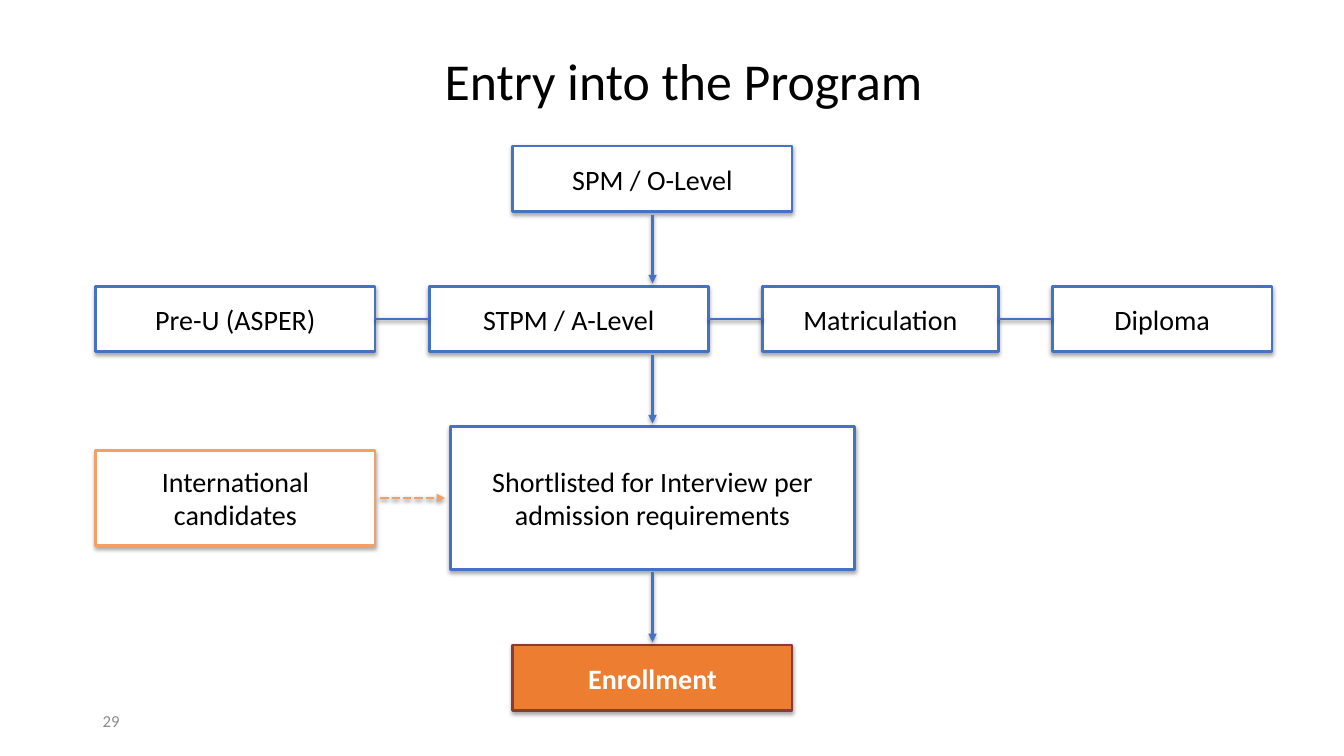
from dataclasses import dataclass
from itertools import pairwise

from lxml.etree import SubElement
from pptx import Presentation
from pptx.dml.color import RGBColor
from pptx.enum.dml import MSO_LINE
from pptx.enum.shapes import MSO_CONNECTOR, MSO_SHAPE
from pptx.enum.text import MSO_ANCHOR, PP_ALIGN
from pptx.oxml.ns import qn
from pptx.util import Inches, Pt

W, H = Inches(13.33), Inches(7.5)
BLUE, PEACH, ORANGE, MAROON = "4472C4", "F2A068", "ED7D31", "8C3A38"
BLACK, WHITE, GREY = "000000", "FFFFFF", "8C8C8C"
MID_X, LEFT, WIDE, LOW = 48.55, 7.13, 20.78, 8.67
ROUTE_GAP, ARROW_GAP = 4.02, 0.4


@dataclass
class Step:
    """A flowchart box, measured in percent of the slide's size."""

    text: str
    x: float
    y: float
    w: float = WIDE
    h: float = LOW
    line: str = BLUE
    fill: str = WHITE
    color: str = BLACK
    bold: bool = False

    @property
    def right(self) -> float:
        return self.x + self.w

    @property
    def bottom(self) -> float:
        return self.y + self.h

    @property
    def mid_y(self) -> float:
        return self.y + self.h / 2


def across(share: float) -> int:
    return round(W * share / 100)


def down(share: float) -> int:
    return round(H * share / 100)


def area(x: float, y: float, w: float, h: float) -> tuple[int, int, int, int]:
    return across(x), down(y), across(w), down(h)


def rgb(value: str) -> RGBColor:
    return RGBColor.from_string(value)


def write(tf, text: str, *, size: float = 20, color: str = BLACK, bold: bool = False,
          align=PP_ALIGN.CENTER, spacing: float = 1.0, inset: float | None = None) -> None:
    """Fill a text frame with one formatted paragraph."""
    tf.word_wrap = True
    tf.vertical_anchor = MSO_ANCHOR.MIDDLE
    if inset is not None:
        tf.margin_left = tf.margin_right = tf.margin_top = tf.margin_bottom = Inches(inset)
    p = tf.paragraphs[0]
    p.alignment, p.line_spacing = align, spacing
    r = p.add_run()
    r.text = text
    r.font.name, r.font.size, r.font.bold = "Calibri", Pt(size), bold
    r.font.color.rgb = rgb(color)


def add_shadow(sp, opacity: int, distance: float) -> None:
    """Give a shape or connector a soft shadow below it."""
    effects = SubElement(sp._element.spPr, qn("a:effectLst"))
    shadow = SubElement(effects, qn("a:outerShdw"), blurRad=str(Pt(3)), dist=str(Pt(distance)),
                        dir="5400000", rotWithShape="0")
    color = SubElement(shadow, qn("a:srgbClr"), val=BLACK)
    SubElement(color, qn("a:alpha"), val=str(opacity * 1000))


def add_step(s, step: Step) -> None:
    sp = s.shapes.add_shape(MSO_SHAPE.RECTANGLE, *area(step.x, step.y, step.w, step.h))
    sp.fill.solid()
    sp.fill.fore_color.rgb = rgb(step.fill)
    sp.line.color.rgb = rgb(step.line)
    sp.line.width = Pt(2)
    add_shadow(sp, 35, 1.8)
    write(sp.text_frame, step.text, color=step.color, bold=step.bold, inset=0.05)


def add_link(s, x1: float, y1: float, x2: float, y2: float, *, color: str = BLUE,
             arrow: bool = True, dashed: bool = False) -> None:
    link = s.shapes.add_connector(MSO_CONNECTOR.STRAIGHT, across(x1), down(y1), across(x2), down(y2))
    link.line.color.rgb = rgb(color)
    link.line.width = Pt(2)
    if dashed:
        link.line.dash_style = MSO_LINE.SQUARE_DOT
    if arrow:
        SubElement(link.line._get_or_add_ln(), qn("a:tailEnd"), type="triangle")
    add_shadow(link, 38, 1.6)


def centred(text: str, y: float, w: float = WIDE, **style) -> Step:
    return Step(text, MID_X - w / 2, y, w, **style)


def route_row(y: float, routes: dict[str, float]) -> list[Step]:
    """Lay the entry routes side by side with equal gaps."""
    steps, x = [], LEFT
    for text, w in routes.items():
        steps.append(Step(text, x, y, w))
        x += w + ROUTE_GAP
    return steps


def main() -> None:
    prs = Presentation()
    prs.slide_width, prs.slide_height = W, H
    s = prs.slides.add_slide(prs.slide_layouts[5])

    title = s.shapes.title
    title.left, title.top, title.width, title.height = area(3.6, 2.67, 94.52, 16.67)
    write(title.text_frame, "Entry into the Program", size=37, spacing=0.9)
    number = s.shapes.add_textbox(*area(6.9, 92.67, 22.5, 5.33))
    write(number.text_frame, "29", size=12, color=GREY, align=PP_ALIGN.LEFT)

    school = centred("SPM / O-Level", 19.33)
    routes = route_row(37.87, {"Pre-U (ASPER)": WIDE, "STPM / A-Level": WIDE,
                               "Matriculation": 17.55, "Diploma": 16.35})
    interview = centred("Shortlisted for Interview per admission requirements", 56.4, 30.08, h=18.93)
    enrollment = centred("Enrollment", 85.33, line=MAROON, fill=ORANGE, color=WHITE, bold=True)
    abroad = Step("International candidates", LEFT, 59.6, h=12.53, line=PEACH)

    for step in (school, *routes, interview, enrollment, abroad):
        add_step(s, step)
    for upper, lower in pairwise((school, routes[1], interview, enrollment)):
        add_link(s, MID_X, upper.bottom + ARROW_GAP, MID_X, lower.y - ARROW_GAP)
    for near, far in pairwise(routes):
        add_link(s, near.right, near.mid_y, far.x, far.mid_y, arrow=False)
    add_link(s, abroad.right + ARROW_GAP, abroad.mid_y, interview.x - ARROW_GAP, abroad.mid_y,
             color=PEACH, dashed=True)

    prs.save("out.pptx")


if __name__ == "__main__":
    main()
